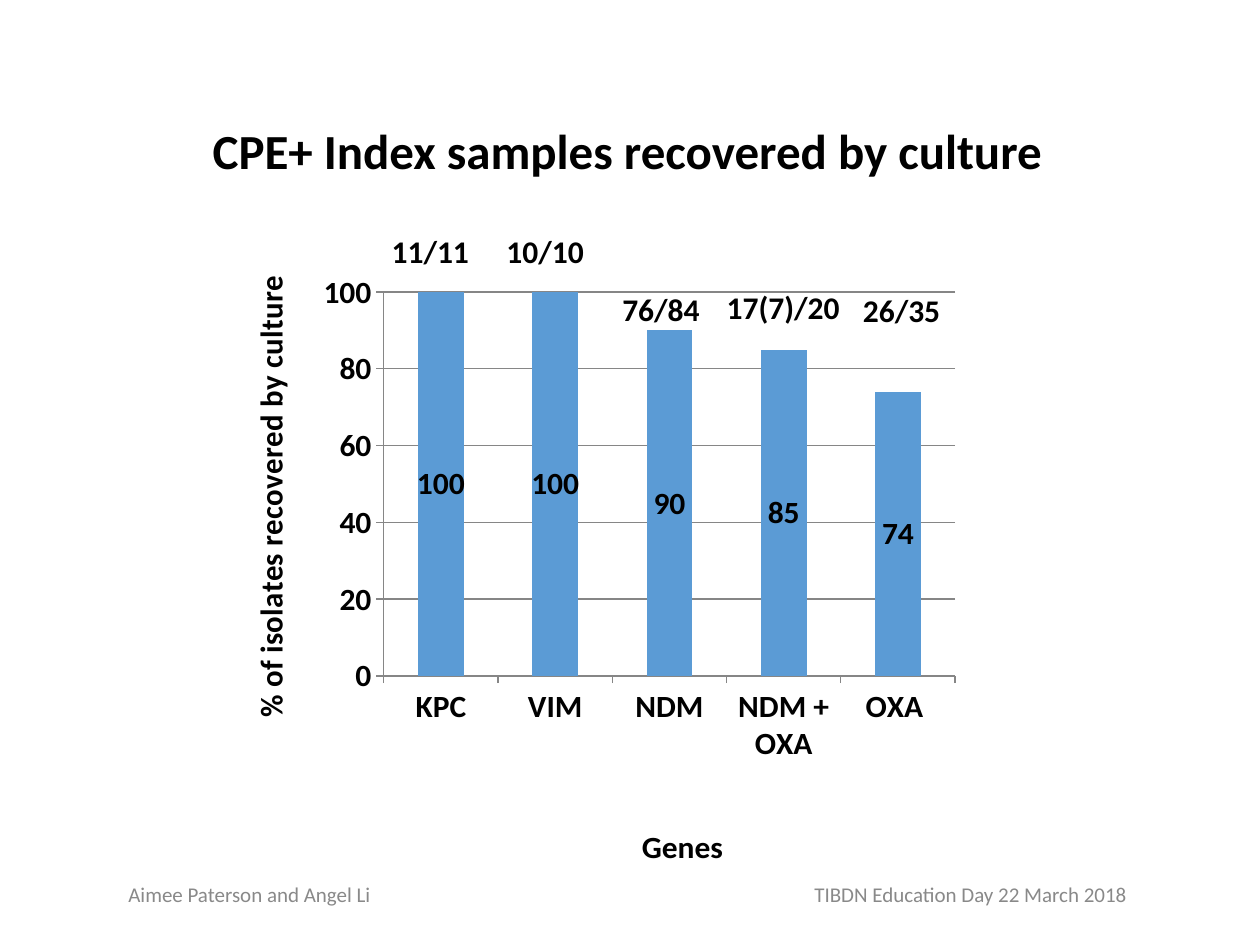
"""Build a slide with a column chart of CPE+ index samples recovered by culture."""
from typing import NamedTuple

from lxml import etree
from pptx import Presentation
from pptx import util as u
from pptx.chart import data
from pptx.dml import color
from pptx.enum import chart as ce
from pptx.enum import text
from pptx.oxml import ns

BLACK, GREY, LINE, BLUE = "000000", "898989", "868686", "5B9BD5"
FONT = "Calibri"


class Label(NamedTuple):
    words: str
    left: float
    top: float
    width: float = 60


RATES = {"KPC": 100, "VIM": 100, "NDM": 90, "NDM + OXA": 85, "OXA ": 74}
COUNTS = [
    Label("11/11", 216.7, 129),
    Label("10/10", 282.3, 129),
    Label("76/84", 348.5, 162),
    Label("17(7)/20", 408.2, 161.3, 79),
    Label("26/35", 486, 162.7),
]


def rgb(value: str) -> color.RGBColor:
    return color.RGBColor.from_string(value)


def style(font, size: float, value: str = BLACK, bold: bool = True) -> None:
    font.name, font.size, font.bold = FONT, u.Pt(size), bold
    font.color.rgb = rgb(value)


def add_run(p, words: str, size: float, value: str = BLACK, bold: bool = True) -> None:
    r = p.add_run()
    r.text = words
    style(r.font, size, value, bold)


def add_box(s, left: float, top: float, width: float, height: float,
            anchor=text.MSO_ANCHOR.TOP, wrap: bool = True):
    sp = s.shapes.add_textbox(u.Pt(left), u.Pt(top), u.Pt(width), u.Pt(height))
    tf = sp.text_frame
    tf.word_wrap, tf.vertical_anchor = wrap, anchor
    return tf


def place(parent, index: int, inner: bool = False, **sizes: float) -> None:
    for old in parent.findall(ns.qn("c:layout")):
        parent.remove(old)
    layout = etree.Element(ns.qn("c:layout"))
    manual = etree.SubElement(layout, ns.qn("c:manualLayout"))
    settings = {"layoutTarget": "inner"} if inner else {}
    settings |= {"xMode": "edge", "yMode": "edge"}
    settings |= {key: str(value) for key, value in sizes.items()}
    for key, value in settings.items():
        etree.SubElement(manual, ns.qn(f"c:{key}")).set("val", value)
    parent.insert(index, layout)


def style_axis(axis, title: str, x: float, y: float) -> None:
    style(axis.tick_labels.font, 18)
    axis.major_tick_mark = ce.XL_TICK_MARK.OUTSIDE
    axis.format.line.color.rgb = rgb(LINE)
    axis.format.line.width = u.Pt(0.75)
    add_run(axis.axis_title.text_frame.paragraphs[0], title, 18)
    place(axis.axis_title._element, 1, x=x, y=y)


def add_rates_chart(s) -> None:
    cd = data.CategoryChartData(number_format="0")
    cd.categories = list(RATES)
    cd.add_series("Series 1", list(RATES.values()))
    chart = s.shapes.add_chart(ce.XL_CHART_TYPE.COLUMN_CLUSTERED, u.Pt(130.3),
                               u.Pt(149.8), u.Pt(424), u.Pt(350.6), cd).chart
    chart.has_legend = chart.has_title = False
    style(chart.font, 14)
    place(chart._chartSpace.chart.plotArea, 0, inner=True, x=0.21, y=0.05, w=0.77, h=0.64)

    style_axis(chart.category_axis, "Genes", 0.55, 0.93)
    axis = chart.value_axis
    style_axis(axis, "% of isolates recovered by culture", 0.02, 0.03)
    axis.axis_title.text_frame._txBody.bodyPr.set("rot", "-5400000")
    axis.minimum_scale, axis.maximum_scale, axis.major_unit = 0, 100, 20
    axis.tick_labels.number_format = "0"
    axis.tick_labels.number_format_is_linked = False
    axis.major_gridlines.format.line.color.rgb = rgb(LINE)
    axis.major_gridlines.format.line.width = u.Pt(0.75)

    plot = chart.plots[0]
    plot.gap_width, plot.vary_by_categories = 150, False
    fill = plot.series[0].format.fill
    fill.solid()
    fill.fore_color.rgb = rgb(BLUE)
    labels = plot.series[0].data_labels
    labels.show_value = True
    labels.position = ce.XL_LABEL_POSITION.CENTER
    labels.number_format, labels.number_format_is_linked = "0", False
    style(labels.font, 18)


def add_footer(s, left_words: str, right_words: str) -> None:
    tf = add_box(s, 12.2, 500.4, 696.2, 21.6, text.MSO_ANCHOR.MIDDLE)
    tf.margin_left = u.Pt(61.2)
    p = tf.paragraphs[0]
    tabs = etree.SubElement(p._p.get_or_add_pPr(), ns.qn("a:tabLst"))
    etree.SubElement(tabs, ns.qn("a:tab"), pos=str(u.Pt(570.5)), algn="r")
    for words in (left_words, "\t", right_words):
        add_run(p, words, 12, GREY, False)


def main() -> None:
    prs = Presentation()
    prs.slide_width, prs.slide_height = u.Pt(720), u.Pt(540)
    s = prs.slides.add_slide(prs.slide_layouts[6])
    add_rates_chart(s)
    p = add_box(s, 114.5, 54, 504, 52.6, text.MSO_ANCHOR.BOTTOM).paragraphs[0]
    p.line_spacing = 0.9
    add_run(p, "CPE+ Index samples recovered by culture", 28)
    for count in COUNTS:
        tf = add_box(s, count.left, count.top, count.width, 33, wrap=False)
        add_run(tf.paragraphs[0], count.words, 18)
    add_footer(s, "Aimee Paterson and Angel Li", "TIBDN Education Day 22 March 2018")
    prs.save("out.pptx")


if __name__ == "__main__":
    main()
